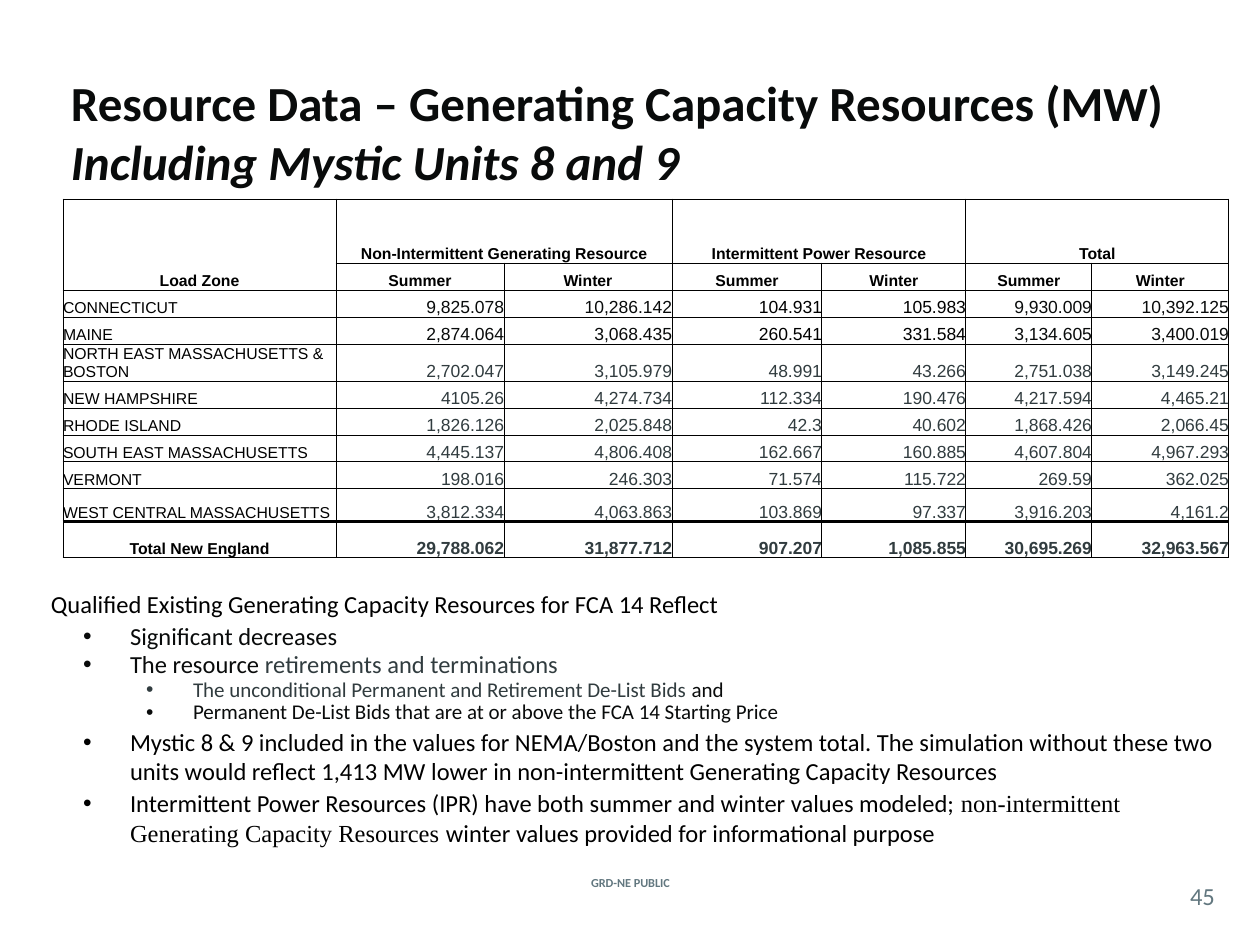
from lxml.etree import SubElement as Sub
from pptx import Presentation
from pptx.dml.color import RGBColor
from pptx.enum.text import MSO_ANCHOR as Anchor, MSO_AUTO_SIZE as Fit, PP_ALIGN as Align
from pptx.oxml.ns import qn
from pptx.util import Emu, Pt

BLACK = RGBColor(0, 0, 0)
DARK = RGBColor(0x09, 0x0B, 0x0B)
SLATE = RGBColor(0x31, 0x3C, 0x3F)
GREY = RGBColor(0x62, 0x77, 0x7F)


def px(n):
    return Emu(round(n * 914400 / 126))


def write(para, text, size=14, color=BLACK, face="Calibri", bold=False, slant=False, align=None):
    run = para.add_run()
    run.text = text
    font = run.font
    font.size, font.name, font.bold, font.italic = Pt(size), face, bold, slant
    font.color.rgb = color
    if align is not None:
        para.alignment = align


deck = Presentation()
deck.slide_width, deck.slide_height = px(1260), px(945)
slide = deck.slides.add_slide(deck.slide_layouts[1])
title, body = slide.placeholders

for box, place, anchor in (
    (title, (57, 42, 1144, 179), Anchor.MIDDLE),
    (body, (37, 581, 1192, 291), Anchor.TOP),
):
    box.left, box.top, box.width, box.height = map(px, place)
    frame = box.text_frame
    frame.word_wrap, frame.auto_size, frame.vertical_anchor = True, Fit.NONE, anchor
    frame.margin_left = frame.margin_right = px(14)
    frame.margin_top = frame.margin_bottom = px(8)

head = title.text_frame.paragraphs[0]
write(head, "Resource Data – Generating Capacity Resources (MW)", size=28, color=DARK, bold=True,
      align=Align.LEFT)
write(head, " Including Mystic Units 8 and 9", size=28, color=DARK, bold=True, slant=True)

lines = [
    (0, 1, [("Qualified Existing Generating Capacity Resources for FCA 14 Reflect", {})]),
    (1, 1, [("Significant decreases", {"color": DARK})]),
    (1, 0.9, [("The resource ", {"color": DARK}), ("retirements and terminations", {"color": SLATE})]),
    (3, 0.9, [("The unconditional Permanent and Retirement De-List Bids ", {"size": 12, "color": SLATE}),
              ("and", {"size": 12, "color": DARK})]),
    (3, 0.9, [("Permanent De-List Bids that are at or above the FCA 14 Starting Price",
               {"size": 12, "color": DARK})]),
    (1, 1, [("Mystic 8 & 9 included in the values for NEMA/Boston and the system total. "
             "The simulation without these two units would reflect 1,413 MW lower in "
             "non-intermittent Generating Capacity Resources", {})]),
    (1, 1, [("Intermittent Power Resources (IPR) have both summer and winter values modeled; ", {}),
            ("non-intermittent Generating Capacity Resources ", {"face": "Times New Roman"}),
            ("winter values provided for informational purpose", {})]),
]
indent = {0: 0, 1: 79, 3: 142}
frame = body.text_frame
for i, (level, pitch, runs) in enumerate(lines):
    para = frame.add_paragraph() if i else frame.paragraphs[0]
    para.level = level
    props = para._p.get_or_add_pPr()
    props.set("marL", str(px(indent[level])))
    props.set("indent", str(px(-47 if level else 0)))
    if level:
        Sub(props, qn("a:buFont"), typeface="Arial")
        Sub(props, qn("a:buChar"), char="•")
    else:
        Sub(props, qn("a:buNone"))
    para.line_spacing = pitch
    para.space_before = Pt(1.4 if level == 1 else 0)
    for text, style in runs:
        write(para, text, **style)

rows = [
    ["Load Zone", "Non-Intermittent Generating Resource", "", "Intermittent Power Resource", "", "Total", ""],
    [""] + ["Summer", "Winter"] * 3,
    ["CONNECTICUT", "9,825.078", "10,286.142", "104.931", "105.983", "9,930.009", "10,392.125"],
    ["MAINE", "2,874.064", "3,068.435", "260.541", "331.584", "3,134.605", "3,400.019"],
    ["NORTH EAST MASSACHUSETTS & BOSTON", "2,702.047", "3,105.979", "48.991", "43.266",
     "2,751.038", "3,149.245"],
    ["NEW HAMPSHIRE", "4105.26", "4,274.734", "112.334", "190.476", "4,217.594", "4,465.21"],
    ["RHODE ISLAND", "1,826.126", "2,025.848", "42.3", "40.602", "1,868.426", "2,066.45"],
    ["SOUTH EAST MASSACHUSETTS", "4,445.137", "4,806.408", "162.667", "160.885", "4,607.804", "4,967.293"],
    ["VERMONT", "198.016", "246.303", "71.574", "115.722", "269.59", "362.025"],
    ["WEST CENTRAL MASSACHUSETTS", "3,812.334", "4,063.863", "103.869", "97.337", "3,916.203", "4,161.2"],
    ["Total New England", "29,788.062", "31,877.712", "907.207", "1,085.855", "30,695.269", "32,963.567"],
]
wide = [273, 168, 168, 150, 144, 126, 137]
high = [64, 27, 27, 27, 37, 27, 27, 27, 27, 33, 36]
last = len(rows) - 1
grid = slide.shapes.add_table(len(rows), len(wide), px(63), px(199), px(sum(wide)), px(sum(high))).table
grid.first_row = grid.horz_banding = False
for col, width in zip(grid.columns, wide):
    col.width = px(width)
for row, height in zip(grid.rows, high):
    row.height = px(height)

for r, row in enumerate(rows):
    for c, text in enumerate(row):
        cell = grid.cell(r, c)
        cell.margin_left = cell.margin_right = cell.margin_top = cell.margin_bottom = 0
        cell.vertical_anchor = Anchor.BOTTOM
        for side in "LRTB":
            thick = (r, side) in ((last - 1, "B"), (last, "T"))
            edge = Sub(cell._tc.get_or_add_tcPr(), qn("a:ln" + side), w=str(Pt(2 if thick else 0.5)))
            Sub(Sub(edge, qn("a:solidFill")), qn("a:srgbClr"), val=str(BLACK))
        cell.fill.background()
        data = r > 1 and c > 0
        color = BLACK
        if data and r > 3:
            color = SLATE
        elif data and c not in (3, 4):
            color = DARK
        align = Align.RIGHT if data else Align.LEFT if 1 < r < last else Align.CENTER
        write(cell.text_frame.paragraphs[0], text, size=10 if data else 9, color=color, face="Arial",
              bold=r < 2 or r == last, align=align)

grid.cell(0, 0).merge(grid.cell(1, 0))
for c in (1, 3, 5):
    grid.cell(0, c).merge(grid.cell(0, c + 1))

for text, place, size, bold in (
    ("GRD-NE PUBLIC", (538, 872, 185, 21), 7, True),
    ("45", (1176, 877, 53, 37), 14, False),
):
    frame = slide.shapes.add_textbox(*map(px, place)).text_frame
    frame.word_wrap, frame.vertical_anchor = True, Anchor.MIDDLE
    frame.margin_left = frame.margin_right = frame.margin_top = frame.margin_bottom = 0
    write(frame.paragraphs[0], text, size=size, color=GREY, bold=bold, align=Align.CENTER)

deck.save("out.pptx")
